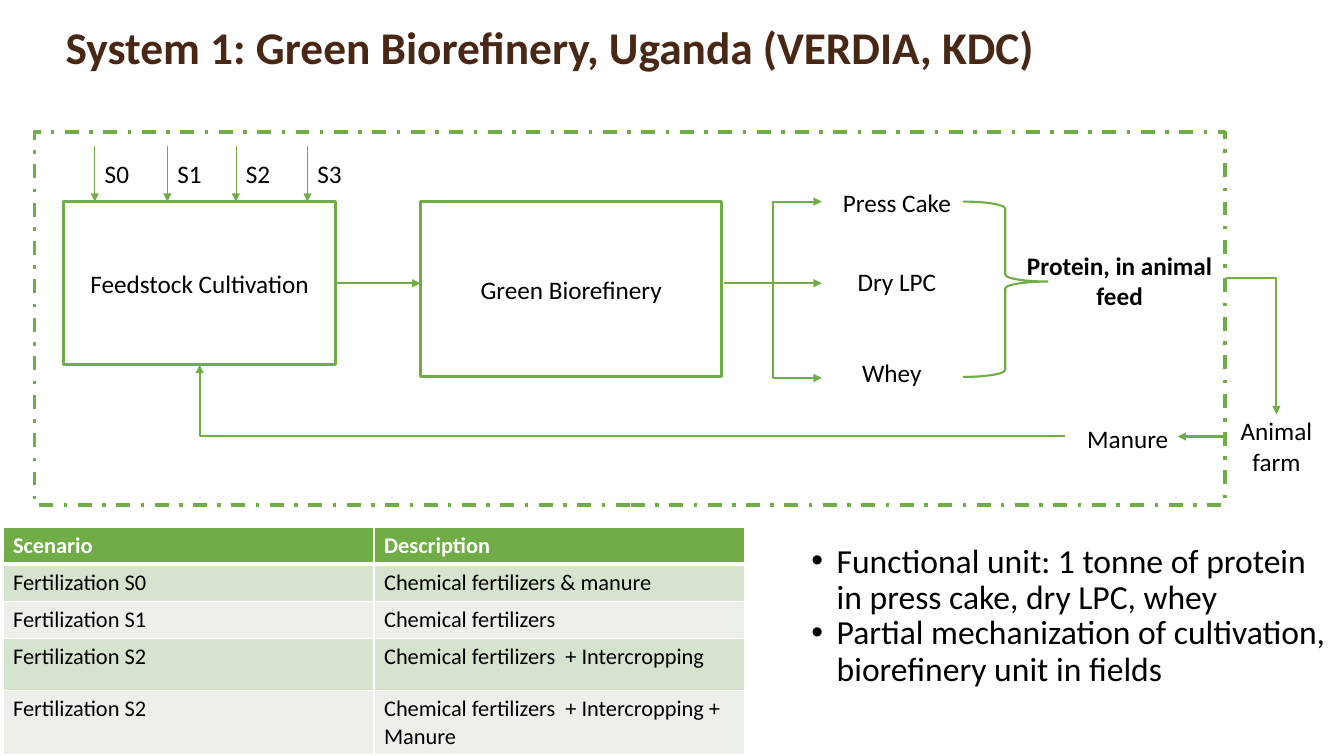
from lxml.etree import SubElement
from pptx import Presentation
from pptx.dml.color import RGBColor
from pptx.enum.dml import MSO_LINE
from pptx.enum.shapes import MSO_CONNECTOR, MSO_SHAPE
from pptx.enum.text import MSO_ANCHOR, MSO_AUTO_SIZE, PP_ALIGN
from pptx.oxml.ns import qn
from pptx.util import Pt

PX = 9144
GREEN, BROWN, BLACK, WHITE = "70AD47", "482714", "000000", "FFFFFF"
BANDS = ["EBF1E9", "D5E3CF"]

TITLE = "System 1: Green Biorefinery, Uganda (VERDIA, KDC)"
LABELS = [
    ("Press Cake", (740, 179, 299, 43), False),
    ("Dry LPC", (740, 258, 299, 43), False),
    ("Whey", (735, 348, 299, 43), False),
    ("Protein, in animal feed", (1006, 258, 209, 40), True),
    ("Animal farm", (1194, 411, 144, 63), False),
    ("Manure", (969, 413, 299, 43), False),
]
INPUTS = [("S0", 94), ("S1", 166), ("S2", 234), ("S3", 305)]
NOTES = [
    ("Functional unit: 1 tonne of protein in press cake, dry LPC, whey", 535, 79),
    ("Partial mechanization of cultivation, biorefinery unit in fields", 606, 88),
]
ROWS = [
    ("Scenario", "Description", 30),
    ("Fertilization S0", "Chemical fertilizers & manure", 30),
    ("Fertilization S1", "Chemical fertilizers", 30),
    ("Fertilization S2", "Chemical fertilizers  + Intercropping", 52),
    ("Fertilization S2", "Chemical fertilizers  + Intercropping + Manure", 52),
]


def color(code):
    return RGBColor.from_string(code)


def emu(*nums):
    return [n * PX for n in nums]


def write(frame, text, size, ink=BLACK, bold=False, align=PP_ALIGN.LEFT, gap=None):
    para = frame.paragraphs[0]
    para.alignment = align
    if gap:
        para.line_spacing = gap
    run = para.add_run()
    run.text = text
    font = run.font
    font.name, font.size, font.bold = "Calibri", Pt(size), bold
    font.color.rgb = color(ink)
    return para


def label(text, box, size=18, anchor=MSO_ANCHOR.MIDDLE, **look):
    frame = slide.shapes.add_textbox(*emu(*box)).text_frame
    frame.word_wrap = True
    frame.vertical_anchor = anchor
    return write(frame, text, size, **look)


def outline(kind, box, width):
    shape = slide.shapes.add_shape(kind, *emu(*box))
    shape.shadow.inherit = False
    shape.fill.background()
    shape.line.color.rgb = color(GREEN)
    shape.line.width = Pt(width)
    return shape


def block(text, box):
    shape = outline(MSO_SHAPE.RECTANGLE, box, 2.25)
    frame = shape.text_frame
    frame.word_wrap = True
    frame.vertical_anchor = MSO_ANCHOR.MIDDLE
    write(frame, text, 18, align=PP_ALIGN.CENTER)
    return shape


def arrow(start, end, kind=MSO_CONNECTOR.STRAIGHT, width=1.5, corner=False):
    link = slide.shapes.add_connector(kind, *emu(*start, *end))
    link.line.color.rgb = color(GREEN)
    link.line.width = Pt(width)
    props = link._element.spPr
    SubElement(props.find(qn("a:ln")), qn("a:tailEnd"), type="triangle")
    SubElement(props, qn("a:effectLst"))
    if corner:
        props.find(qn("a:prstGeom")).set("prst", "bentConnector2")
    return link


def edge(cell, side, width):
    line = SubElement(cell._tc.get_or_add_tcPr(), qn("a:" + side), w=str(Pt(width)))
    fill = SubElement(line, qn("a:solidFill"))
    SubElement(fill, qn("a:srgbClr"), val=WHITE)


deck = Presentation()
deck.slide_width, deck.slide_height = emu(1333, 750)
slide = deck.slides.add_slide(deck.slide_layouts[5])

title = slide.shapes.title
title.left, title.top, title.width, title.height = emu(55, 10, 1002, 79)
frame = title.text_frame
frame.auto_size = MSO_AUTO_SIZE.NONE
frame.word_wrap = True
frame.vertical_anchor = MSO_ANCHOR.MIDDLE
write(frame, TITLE, 32.4, BROWN, True, gap=0.9)

border = outline(MSO_SHAPE.RECTANGLE, (34, 131, 1181, 370), 2.5)
border.line.dash_style = MSO_LINE.DASH_DOT
feed = block("Feedstock Cultivation", (63, 200, 270, 162))
block("Green Biorefinery", (417, 200, 299, 174))
brace = outline(MSO_SHAPE.RIGHT_BRACE, (955, 200, 84, 174), 1.5)
brace.adjustments[0], brace.adjustments[1] = 0.083, 0.456

ELBOW = MSO_CONNECTOR.ELBOW
arrow((333, 281), (417, 281)).begin_connect(feed, 3)
arrow((718, 281), (815, 281))
for y in (200, 375):
    arrow((718, 281), (815, y), ELBOW)
arrow((1214, 433), (1168, 433))
arrow((1056, 433), (198, 362), ELBOW, corner=True).end_connect(feed, 2)
arrow((1216, 276), (1266, 411), ELBOW, corner=True)

for text, box, bold in LABELS:
    label(text, box, bold=bold, align=PP_ALIGN.CENTER)
for text, x in INPUTS:
    arrow((x, 145), (x, 200), width=0.5)
    label(text, (x, 158, 58, 35), anchor=MSO_ANCHOR.TOP, gap=0.8)

for text, top, high in NOTES:
    para = label(text, (795, top, 538, high), 24, MSO_ANCHOR.TOP, gap=0.9)
    props = para._p.get_or_add_pPr()
    props.set("marL", str(25 * PX))
    props.set("indent", str(-25 * PX))
    SubElement(props, qn("a:buFont"), typeface="Arial")
    SubElement(props, qn("a:buChar"), char="•")

high = sum(row[2] for row in ROWS)
table = slide.shapes.add_table(len(ROWS), 2, *emu(3, 523, 736, high)).table
for r, (*texts, tall) in enumerate(ROWS):
    table.rows[r].height = tall * PX
    for c, text in enumerate(texts):
        cell = table.cell(r, c)
        head = r == 0
        write(cell.text_frame, text, 16, WHITE if head else BLACK, head)
        for side in ("lnL", "lnR", "lnT", "lnB"):
            thick = (r, side) in ((0, "lnB"), (1, "lnT"))
            edge(cell, side, 3 if thick else 1)
        cell.fill.solid()
        cell.fill.fore_color.rgb = color(GREEN if head else BANDS[r % 2])

deck.save("out.pptx")
